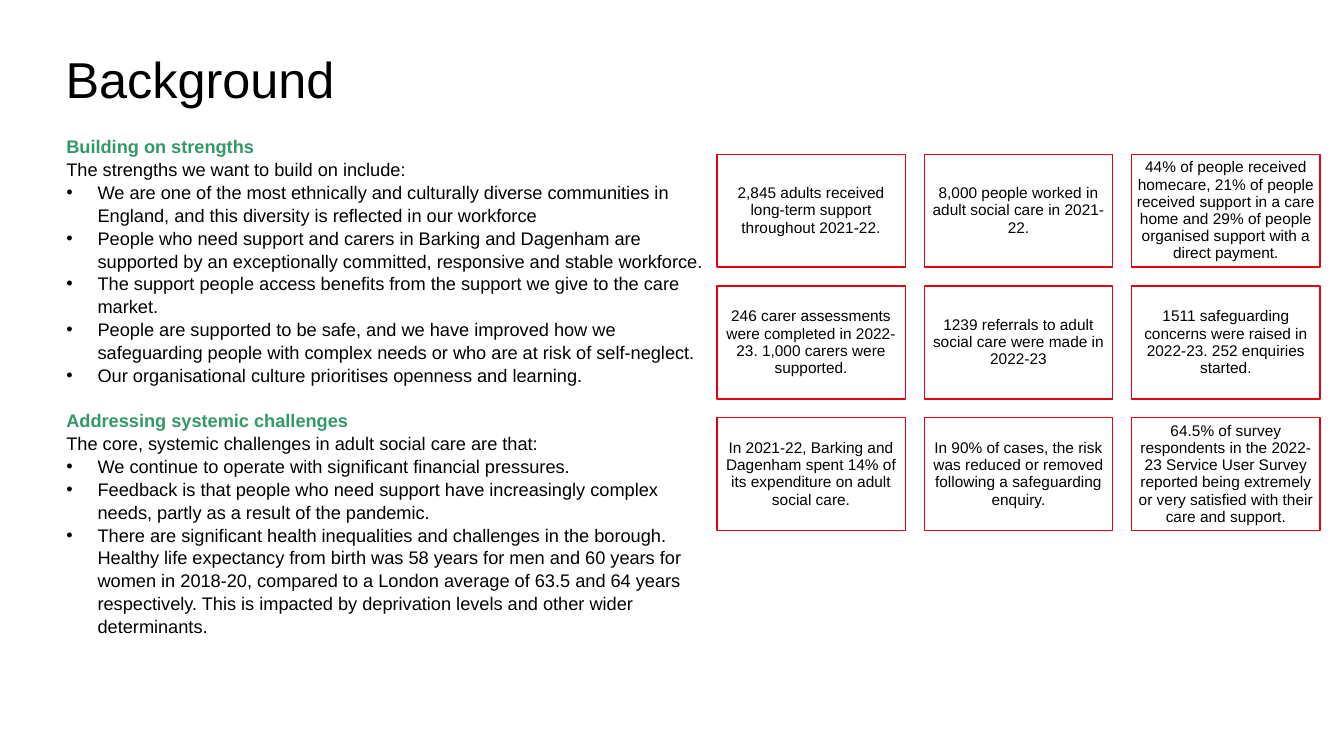
from lxml import etree
from pptx import Presentation
from pptx.dml.color import RGBColor
from pptx.enum.shapes import MSO_SHAPE
from pptx.enum.text import MSO_ANCHOR, MSO_AUTO_SIZE, PP_ALIGN
from pptx.oxml.ns import qn
from pptx.util import Inches, Pt

RECTANGLE = MSO_SHAPE.RECTANGLE
TOP, MIDDLE = MSO_ANCHOR.TOP, MSO_ANCHOR.MIDDLE
LEFT, CENTER = PP_ALIGN.LEFT, PP_ALIGN.CENTER
NO_AUTOFIT = MSO_AUTO_SIZE.NONE
TITLE_ONLY = 5

FONT = "Arial"
COLOURS = {"text": "000000", "heading": "339966", "tile": "FFFFFF", "border": "E30311"}

TITLE_BOX = (0.55, 0.36, 9.86, 0.71)
SECTIONS_BOX = (0.56, 1.05, 6.55, 5.65)
TILES_ORIGIN = (7.11, 1.53)
TILE_WIDTH, TILE_HEIGHT = 1.87, 1.12
TILE_GAP = 0.1 * TILE_WIDTH
TILE_COLUMNS = 3
BULLET_INDENT = 0.31

SECTIONS = [
    ("Building on strengths", "The strengths we want to build on include:", [
        "We are one of the most ethnically and culturally diverse communities in England, "
        "and this diversity is reflected in our workforce",
        "People who need support and carers in Barking and Dagenham are supported by an "
        "exceptionally committed, responsive and stable workforce.",
        "The support people access benefits from the support we give to the care market.",
        "People are supported to be safe, and we have improved how we safeguarding people "
        "with complex needs or who are at risk of self-neglect.",
        "Our organisational culture prioritises openness and learning.",
    ]),
    ("Addressing systemic challenges",
     "The core, systemic challenges in adult social care are that:", [
         "We continue to operate with significant financial pressures.",
         "Feedback is that people who need support have increasingly complex needs, "
         "partly as a result of the pandemic.",
         "There are significant health inequalities and challenges in the borough. Healthy "
         "life expectancy from birth was 58 years for men and 60 years for women in 2018-20, "
         "compared to a London average of 63.5 and 64 years respectively. This is impacted "
         "by deprivation levels and other wider determinants.",
     ]),
]

FACTS = [
    "2,845 adults received long-term support throughout 2021-22.",
    "8,000 people worked in adult social care in 2021-22.",
    "44% of people received homecare, 21% of people received support in a care home "
    "and 29% of people organised support with a direct payment.",
    "246 carer assessments were completed in 2022-23. 1,000 carers were supported.",
    "1239 referrals to adult social care were made in 2022-23",
    "1511 safeguarding concerns were raised in 2022-23. 252 enquiries started.",
    "In 2021-22, Barking and Dagenham spent 14% of its expenditure on adult social care.",
    "In 90% of cases, the risk was reduced or removed following a safeguarding enquiry.",
    "64.5% of survey respondents in the 2022-23 Service User Survey reported being "
    "extremely or very satisfied with their care and support.",
]


def colour(name):
    return RGBColor.from_string(COLOURS[name])


def style(para, size, ink="text", bold=False, align=LEFT, spacing=1.0):
    para.alignment = align
    para.line_spacing = spacing
    para.font.name = FONT
    para.font.size = Pt(size)
    para.font.bold = bold
    para.font.color.rgb = colour(ink)


def add_bullet(para):
    properties = para._p.get_or_add_pPr()
    properties.set("marL", str(Inches(BULLET_INDENT)))
    properties.set("indent", str(-Inches(BULLET_INDENT)))
    etree.SubElement(properties, qn("a:buFont")).set("typeface", FONT)
    etree.SubElement(properties, qn("a:buChar")).set("char", "•")


def place_title(slide, box):
    title = slide.shapes.title
    title.left, title.top, title.width, title.height = map(Inches, box)
    frame = title.text_frame
    frame.text = "Background"
    frame.auto_size = NO_AUTOFIT
    frame.vertical_anchor = TOP
    frame.margin_top = Inches(0.12)
    style(frame.paragraphs[0], 36)


def add_sections(slide, box):
    frame = slide.shapes.add_textbox(*map(Inches, box)).text_frame
    frame.word_wrap = True
    frame.margin_top = Inches(0.28)
    para = frame.paragraphs[0]
    for number, (heading, lead, points) in enumerate(SECTIONS):
        if number:
            para = frame.add_paragraph()
            para.space_before = Pt(15.5)
        para.text = heading
        style(para, 13, "heading", bold=True, spacing=1.05)
        for position, line in enumerate([lead, *points]):
            para = frame.add_paragraph()
            para.text = line
            if position:
                add_bullet(para)
            style(para, 13, spacing=1.05)


def add_tile(slide, box, fact):
    tile = slide.shapes.add_shape(RECTANGLE, *map(Inches, box))
    tile.shadow.inherit = False
    tile.fill.solid()
    tile.fill.fore_color.rgb = colour("tile")
    tile.line.color.rgb = colour("border")
    tile.line.width = Pt(1)
    frame = tile.text_frame
    frame.word_wrap = True
    frame.vertical_anchor = MIDDLE
    frame.margin_left = frame.margin_right = Inches(0.05)
    frame.margin_top = frame.margin_bottom = Inches(0.05)
    frame.text = fact
    style(frame.paragraphs[0], 11, align=CENTER, spacing=0.93)


def add_tiles(slide, origin):
    left, top = origin
    for number, fact in enumerate(FACTS):
        row, column = divmod(number, TILE_COLUMNS)
        box = (left + column * (TILE_WIDTH + TILE_GAP),
               top + row * (TILE_HEIGHT + TILE_GAP), TILE_WIDTH, TILE_HEIGHT)
        add_tile(slide, box, fact)


def main():
    deck = Presentation()
    deck.slide_width, deck.slide_height = Inches(13.33), Inches(7.5)
    slide = deck.slides.add_slide(deck.slide_layouts[TITLE_ONLY])
    place_title(slide, TITLE_BOX)
    add_sections(slide, SECTIONS_BOX)
    add_tiles(slide, TILES_ORIGIN)
    deck.save("out.pptx")


if __name__ == "__main__":
    main()
